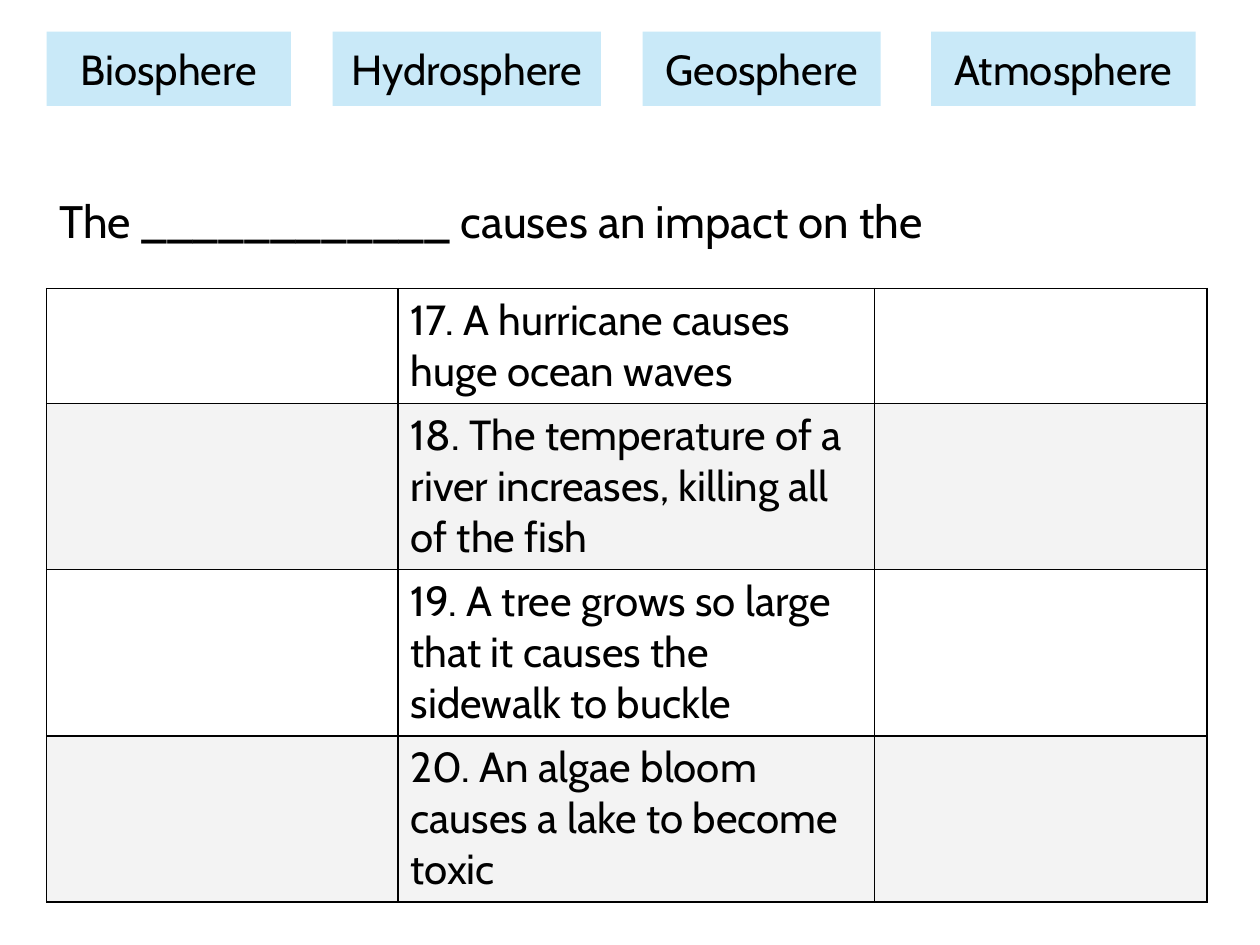
"""Build the worksheet slide on how Earth's spheres affect one another."""
from dataclasses import dataclass

from lxml import etree
from pptx import Presentation
from pptx.dml.color import RGBColor
from pptx.enum.shapes import MSO_SHAPE
from pptx.enum.text import MSO_ANCHOR, MSO_AUTO_SIZE, PP_ALIGN
from pptx.oxml.ns import qn
from pptx.util import Inches, Pt

RECTANGLE = MSO_SHAPE.RECTANGLE
TOP, MIDDLE = MSO_ANCHOR.TOP, MSO_ANCHOR.MIDDLE
LEFT, CENTER = PP_ALIGN.LEFT, PP_ALIGN.CENTER
NO_AUTOFIT = MSO_AUTO_SIZE.NONE
TITLE_ONLY = 5


@dataclass(frozen=True)
class Theme:
    font: str = "Cabin"
    ink: str = "000000"
    label: str = "C9E9F8"
    bands: tuple = ("FFFFFF", "F3F3F3")
    body_size: int = 24
    prompt_size: int = 26
    border: int = 1


THEME = Theme()
MARGIN = 0.37

SPHERES = [
    ("Biosphere", 0.37, 1.94),
    ("Hydrosphere", 2.64, 2.13),
    ("Geosphere", 5.1, 1.89),
    ("Atmosphere", 7.39, 2.1),
]
PROMPT = "The ____________ causes an impact on the _____________"
EVENTS = [
    ("17. A hurricane causes huge ocean waves", 0.91),
    ("18. The temperature of a river increases, killing all of the fish", 1.32),
    ("19. A tree grows so large that it causes the sidewalk to buckle", 1.32),
    ("20. An algae bloom causes a lake to become toxic", 1.32),
]
COLUMN_WIDTHS = [2.79, 3.78, 2.64]
EVENT_COLUMN = 1


def write(frame, text, size=THEME.body_size, align=LEFT, anchor=TOP):
    frame.word_wrap = True
    frame.vertical_anchor = anchor
    para = frame.paragraphs[0]
    para.alignment = align
    span = para.add_run()
    span.text = text
    span.font.name = THEME.font
    span.font.size = Pt(size)
    span.font.color.rgb = RGBColor.from_string(THEME.ink)


def paint(target, color):
    target.fill.solid()
    target.fill.fore_color.rgb = RGBColor.from_string(color)


def outline(cell):
    properties = cell._tc.get_or_add_tcPr()
    for position, side in enumerate(("lnL", "lnR", "lnT", "lnB")):
        line = etree.Element(qn(f"a:{side}"), w=str(Pt(THEME.border)))
        fill = etree.SubElement(line, qn("a:solidFill"))
        etree.SubElement(fill, qn("a:srgbClr"), val=THEME.ink)
        properties.insert(position, line)


def add_labels(page):
    for name, left, width in SPHERES:
        box = page.shapes.add_shape(
            RECTANGLE, Inches(left), Inches(0.25), Inches(width), Inches(0.59))
        box.shadow.inherit = False
        box.line.fill.background()
        paint(box, THEME.label)
        write(box.text_frame, name, align=CENTER, anchor=MIDDLE)


def add_prompt(page):
    title = page.shapes.title
    title.left, title.top = Inches(MARGIN), Inches(1.48)
    title.width, title.height = Inches(9.28), Inches(0.54)
    title.text_frame.auto_size = NO_AUTOFIT
    write(title.text_frame, PROMPT, size=THEME.prompt_size)


def add_events(page):
    height = sum(row_height for _, row_height in EVENTS)
    table = page.shapes.add_table(
        len(EVENTS), len(COLUMN_WIDTHS), Inches(MARGIN), Inches(2.29),
        Inches(sum(COLUMN_WIDTHS)), Inches(height)).table
    table.first_row = table.horz_banding = False
    for column, width in zip(table.columns, COLUMN_WIDTHS):
        column.width = Inches(width)
    for index, (event, row_height) in enumerate(EVENTS):
        row = table.rows[index]
        row.height = Inches(row_height)
        for cell in row.cells:
            paint(cell, THEME.bands[index % len(THEME.bands)])
            outline(cell)
        write(row.cells[EVENT_COLUMN].text_frame, event)


def main():
    deck = Presentation()
    deck.slide_width, deck.slide_height = Inches(10), Inches(7.5)
    page = deck.slides.add_slide(deck.slide_layouts[TITLE_ONLY])
    add_labels(page)
    add_prompt(page)
    add_events(page)
    deck.save("out.pptx")


if __name__ == "__main__":
    main()
